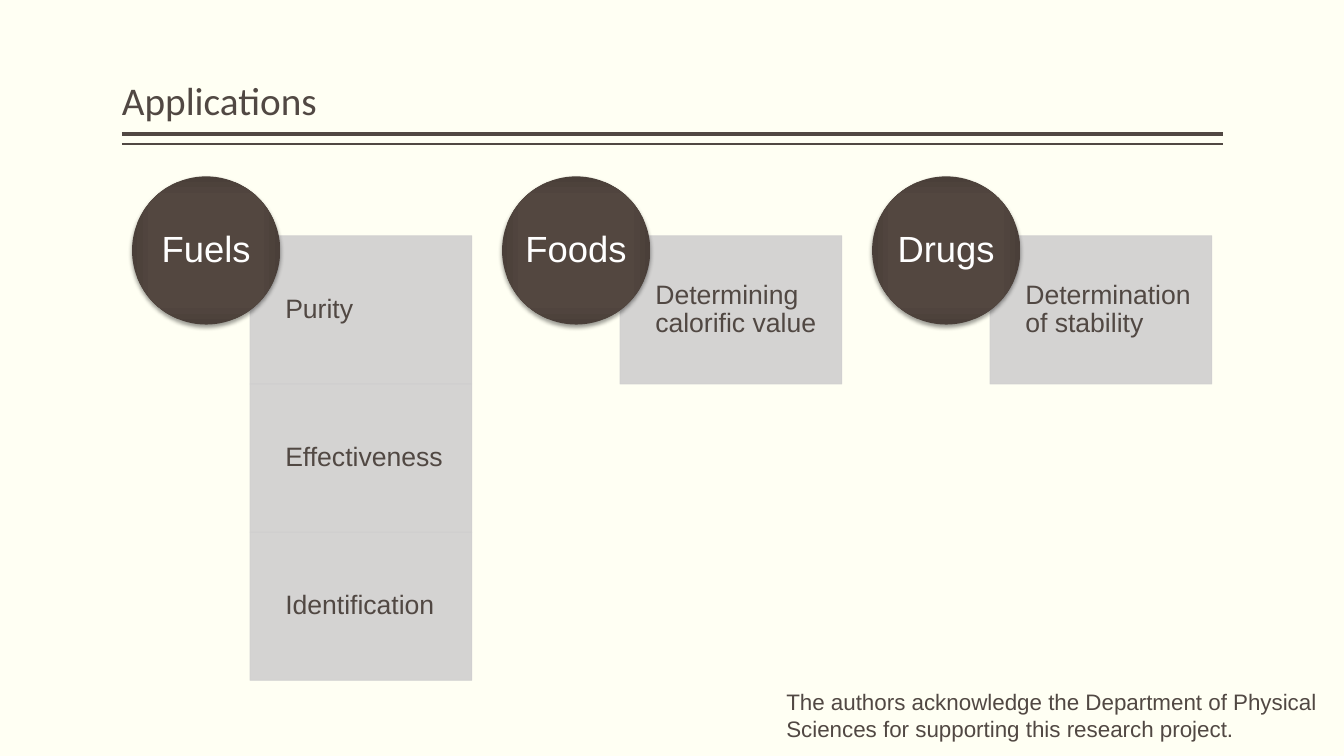
import pptx
import pptx.util
import pptx.dml.color
import pptx.enum.shapes
import pptx.enum.text
import pptx.oxml
import pptx.oxml.ns
from lxml import etree

Inches, Pt = pptx.util.Inches, pptx.util.Pt
RGB = pptx.dml.color.RGBColor.from_string
SHAPE = pptx.enum.shapes.MSO_SHAPE
ANCHOR = pptx.enum.text.MSO_ANCHOR
ALIGN = pptx.enum.text.PP_ALIGN
qn = pptx.oxml.ns.qn

TITLE = "Applications"
APPLICATIONS = [
    ("Fuels", ["Purity", "Effectiveness", "Identification"]),
    ("Foods", ["Determining calorific value"]),
    ("Drugs", ["Determination of stability"]),
]
THANKS = ("The authors acknowledge the Department of Physical Sciences "
          "for supporting this research project.")
COLORS = {"bg": "FFFFF3", "ink": "514843", "box": "D0CFCF", "white": "FFFFFF",
          "shadow": "000000"}
CIRCLE_STOPS = [(0, "544740"), (71, "534740"), (100, "4A3F39")]
RULES = [(1.33, 3), (1.43, 1)]
LEFT, RIGHT = 1.21, 12.13
COL_X, COL_STEP = 1.31, 3.67
CIRCLE_Y, SIZE = 1.75, 1.47
BOX_DX, BOX_Y, BOX_W = 1.17, 2.34, 2.2
NS = 'xmlns:a="http://schemas.openxmlformats.org/drawingml/2006/main"'


def write(shape, text, size, color="ink", font="Arial", align=ALIGN.LEFT,
          anchor=ANCHOR.MIDDLE, insets=(0, 0, 0, 0), spacing=0.9):
    tf = shape.text_frame
    tf.word_wrap = True
    tf.vertical_anchor = anchor
    tf.margin_left, tf.margin_top, tf.margin_right, tf.margin_bottom = map(Inches, insets)
    p = tf.paragraphs[0]
    p.alignment = align
    p.line_spacing = spacing
    r = p.add_run()
    r.text = text
    r.font.size = Pt(size)
    r.font.name = font
    r.font.color.rgb = RGB(COLORS[color])


def text_box(s, x, y, w, h):
    return s.shapes.add_textbox(Inches(x), Inches(y), Inches(w), Inches(h))


def add_rule(s, y, width):
    line = s.shapes.add_connector(pptx.enum.shapes.MSO_CONNECTOR.STRAIGHT,
                                  Inches(LEFT), Inches(y), Inches(RIGHT), Inches(y))
    line.line.color.rgb = RGB(COLORS["ink"])
    line.line.width = Pt(width)
    etree.SubElement(line._element.spPr, qn("a:effectLst"))


def add_box(s, x, y, text):
    sp = s.shapes.add_shape(SHAPE.RECTANGLE, Inches(x), Inches(y), Inches(BOX_W), Inches(SIZE))
    sp.shadow.inherit = False
    sp.fill.solid()
    sp.fill.fore_color.rgb = RGB(COLORS["box"])
    sp.line.color.rgb = RGB(COLORS["box"])
    sp.line.width = Pt(0.5)
    for color in sp._element.spPr.iter(qn("a:srgbClr")):
        etree.SubElement(color, qn("a:alpha"), val="90000")
    write(sp, text, 19, insets=(0.35, 0.15, 0.15, 0.15))


def add_circle(s, x, text):
    sp = s.shapes.add_shape(SHAPE.OVAL, Inches(x), Inches(CIRCLE_Y), Inches(SIZE), Inches(SIZE))
    sp.shadow.inherit = False
    sp.line.fill.background()
    stops = "".join(f'<a:gs pos="{pos * 1000}"><a:srgbClr val="{color}"/></a:gs>'
                    for pos, color in CIRCLE_STOPS)
    spPr = sp._element.spPr
    spPr.find(qn("a:ln")).addprevious(pptx.oxml.parse_xml(
        f'<a:gradFill {NS} rotWithShape="1"><a:gsLst>{stops}</a:gsLst><a:path path="rect">'
        '<a:fillToRect l="50000" t="50000" r="50000" b="50000"/></a:path></a:gradFill>'))
    spPr.find(qn("a:effectLst")).append(pptx.oxml.parse_xml(
        f'<a:outerShdw {NS} blurRad="{Pt(3.1)}" dist="{Pt(2)}" dir="5400000" rotWithShape="0">'
        f'<a:srgbClr val="{COLORS["shadow"]}"><a:alpha val="38000"/></a:srgbClr></a:outerShdw>'))
    write(sp, text, 26, color="white", align=ALIGN.CENTER)


def main():
    prs = pptx.Presentation()
    prs.slide_width, prs.slide_height = Inches(13.33), Inches(7.5)
    s = prs.slides.add_slide(prs.slide_layouts[6])
    s.background.fill.solid()
    s.background.fill.fore_color.rgb = RGB(COLORS["bg"])

    for y, width in RULES:
        add_rule(s, y, width)
    write(text_box(s, LEFT, 0.08, RIGHT - LEFT, 1.2), TITLE, 28, font="Calibri",
          anchor=ANCHOR.BOTTOM, insets=(0, 0.05, 0, 0.05))

    for col, (name, uses) in enumerate(APPLICATIONS):
        x = COL_X + col * COL_STEP
        for row, use in enumerate(uses):
            add_box(s, x + BOX_DX, BOX_Y + row * SIZE, use)
        add_circle(s, x, name)

    write(text_box(s, 7.7, 6.78, 5.75, 0.64), THANKS, 16, anchor=ANCHOR.TOP,
          insets=(0.1, 0.05, 0.1, 0.05), spacing=1.0)
    prs.save("out.pptx")


if __name__ == "__main__":
    main()
